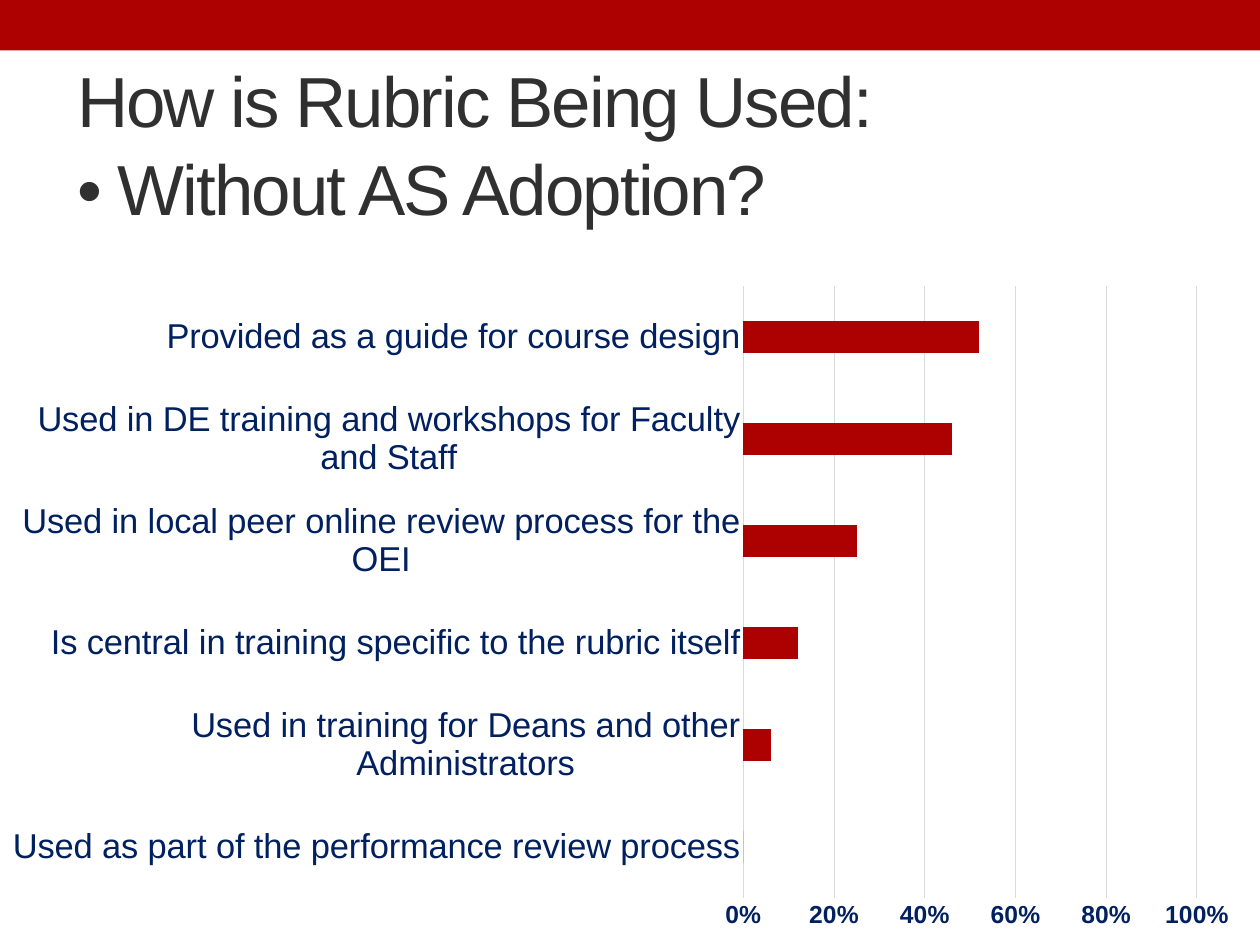
from lxml import etree
from pptx import Presentation
from pptx.chart.data import CategoryChartData
from pptx.dml.color import RGBColor
from pptx.enum.chart import XL_CHART_TYPE, XL_TICK_MARK
from pptx.enum.shapes import MSO_SHAPE
from pptx.enum.text import MSO_ANCHOR, MSO_AUTO_SIZE, PP_ALIGN
from pptx.util import Inches, Pt

BAR_CLUSTERED = XL_CHART_TYPE.BAR_CLUSTERED
NO_TICK = XL_TICK_MARK.NONE
RECTANGLE = MSO_SHAPE.RECTANGLE
MIDDLE = MSO_ANCHOR.MIDDLE
NO_AUTOFIT = MSO_AUTO_SIZE.NONE
LEFT = PP_ALIGN.LEFT

FONT = "Arial"
RED, NAVY, GRAY, DARK = "AD0101", "002060", "D9D9D9", "303030"
CHART_NS = "http://schemas.openxmlformats.org/drawingml/2006/chart"


def color(value):
    return RGBColor.from_string(value)


def style_font(font, size, value, bold=False):
    font.name = FONT
    font.size = Pt(size)
    font.bold = bold
    font.color.rgb = color(value)


prs = Presentation()
prs.slide_width = Inches(14.22)
prs.slide_height = Inches(10.67)
s = prs.slides.add_slide(prs.slide_layouts[5])

band = s.shapes.add_shape(RECTANGLE, 0, 0, prs.slide_width, Inches(0.57))
band.shadow.inherit = False
band.fill.solid()
band.fill.fore_color.rgb = color(RED)
band.line.fill.background()

title = s.shapes.title
title.left, title.top = Inches(0.71), Inches(0.83)
title.width, title.height = Inches(12.8), Inches(1.54)
tf = title.text_frame
tf.text = "How is Rubric Being Used:\v• Without AS Adoption?"
tf.word_wrap = True
tf.auto_size = NO_AUTOFIT
tf.vertical_anchor = MIDDLE
tf.margin_left = tf.margin_right = Inches(0.16)
tf.margin_top = tf.margin_bottom = Inches(0.08)
p = tf.paragraphs[0]
p.alignment = LEFT
p.line_spacing = 1.04
for r in p.runs:
    style_font(r.font, 57.6, DARK)
    r.font._element.set("spc", "-160")

rubric_uses = [
    ("Used as part of the performance review process", 0),
    ("Used in training for Deans and other Administrators", 0.06),
    ("Is central in training specific to the rubric itself", 0.12),
    ("Used in local peer online review process for the OEI", 0.25),
    ("Used in DE training and workshops for Faculty and Staff", 0.46),
    ("Provided as a guide for course design", 0.52),
]
data = CategoryChartData(number_format="0%")
data.categories = [use for use, share in rubric_uses]
data.add_series("Series 1", [share for use, share in rubric_uses])
chart = s.shapes.add_chart(
    BAR_CLUSTERED, 0, Inches(3.08), prs.slide_width, Inches(7.59), data
).chart
chart.has_legend = False
chart.has_title = False
style_font(chart.font, 10, "000000")

plot = chart.plots[0]
plot.gap_width = 219
plot.vary_by_categories = False
fill = plot.series[0].format.fill
fill.solid()
fill.fore_color.rgb = color(RED)

cat_axis, val_axis = chart.category_axis, chart.value_axis
for axis, size, bold in [(cat_axis, 28, False), (val_axis, 20, True)]:
    axis.major_tick_mark = NO_TICK
    axis.minor_tick_mark = NO_TICK
    style_font(axis.tick_labels.font, size, NAVY, bold)

val_axis.minimum_scale = 0
val_axis.maximum_scale = 1
val_axis.major_unit = 0.2
val_axis.tick_labels.number_format = "0%"
val_axis.tick_labels.number_format_is_linked = False
val_axis.format.line.fill.background()
for line in (cat_axis.format.line, val_axis.major_gridlines.format.line):
    line.color.rgb = color(GRAY)
    line.width = Pt(0.75)

plot_area = chart._chartSpace.chart.plotArea
for layout in plot_area.findall(f"{{{CHART_NS}}}layout"):
    plot_area.remove(layout)
layout = etree.Element(f"{{{CHART_NS}}}layout")
manual = etree.SubElement(layout, f"{{{CHART_NS}}}manualLayout")
for tag, value in [
    ("layoutTarget", "inner"), ("xMode", "edge"), ("yMode", "edge"),
    ("x", "0.59"), ("y", "0.02"), ("w", "0.36"), ("h", "0.91"),
]:
    etree.SubElement(manual, f"{{{CHART_NS}}}{tag}", val=value)
plot_area.insert(0, layout)

prs.save("out.pptx")
